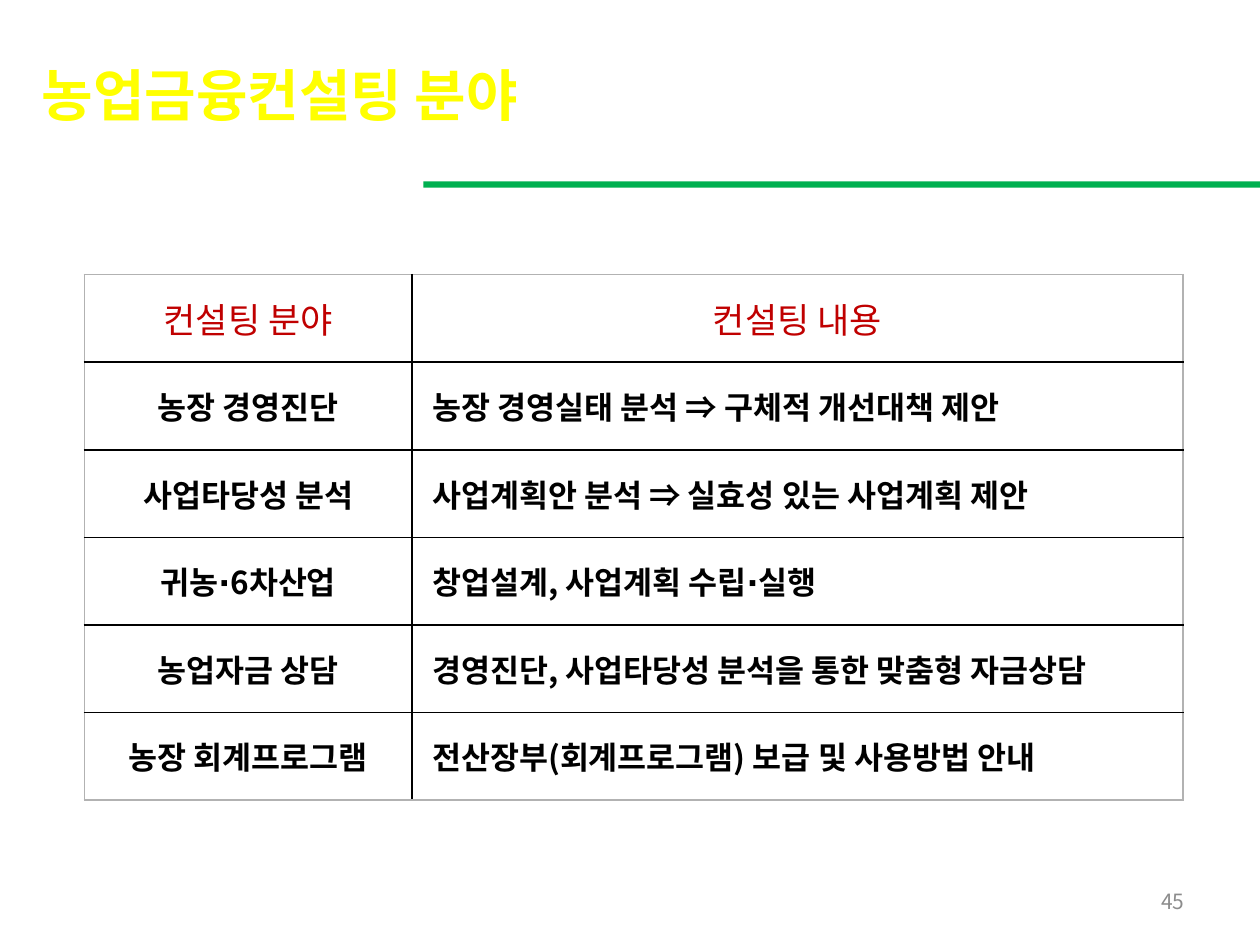
from lxml.etree import SubElement
from pptx import Presentation
from pptx.dml.color import RGBColor
from pptx.enum.shapes import MSO_SHAPE
from pptx.enum.text import MSO_ANCHOR, PP_ALIGN
from pptx.oxml.ns import qn
from pptx.util import Inches, Pt

FONT = "Noto Sans CJK KR"
YELLOW = RGBColor(0xFF, 0xFF, 0x00)
GREEN = RGBColor(0x00, 0xB0, 0x50)
RED = RGBColor(0xC0, 0x00, 0x00)
BLACK = RGBColor(0x00, 0x00, 0x00)
GRAY = RGBColor(0x8C, 0x8C, 0x8C)
FRAME_GRAY = RGBColor(0xB2, 0xB2, 0xB2)

COLUMN_WIDTHS = (2.6, 6.12)
ROW_HEIGHT = 0.695
ROWS = (
    ("컨설팅 분야", "컨설팅 내용"),
    ("농장 경영진단", "농장 경영실태 분석 ⇒ 구체적 개선대책 제안"),
    ("사업타당성 분석", "사업계획안 분석 ⇒ 실효성 있는 사업계획 제안"),
    ("귀농∙6차산업", "창업설계, 사업계획 수립∙실행"),
    ("농업자금 상담", "경영진단, 사업타당성 분석을 통한 맞춤형 자금상담"),
    ("농장 회계프로그램", "전산장부(회계프로그램) 보급 및 사용방법 안내"),
)


def write_text(frame, text, size, color, bold=False, align=PP_ALIGN.LEFT):
    frame.text = text
    para = frame.paragraphs[0]
    para.alignment = align
    for span in para.runs:
        span.font.size = Pt(size)
        span.font.bold = bold
        span.font.color.rgb = color
        span.font.name = FONT
        SubElement(span.font._element, qn("a:ea")).set("typeface", FONT)


def add_title(page, text):
    title = page.shapes.title
    title.left, title.top = Inches(0.23), Inches(0.43)
    title.width, title.height = Inches(5.32), Inches(0.64)
    title.text_frame.vertical_anchor = MSO_ANCHOR.MIDDLE
    write_text(title.text_frame, text, 32, YELLOW, bold=True)


def add_rule(page):
    rule = page.shapes.add_shape(
        MSO_SHAPE.RECTANGLE, Inches(3.36), Inches(1.44), Inches(6.64), Inches(0.05))
    rule.shadow.inherit = False
    rule.fill.solid()
    rule.fill.fore_color.rgb = GREEN
    rule.line.fill.background()


def set_border(cell, side, color):
    line = SubElement(cell._tc.get_or_add_tcPr(), qn(f"a:{side}"), w=str(Pt(1)))
    fill = SubElement(line, qn("a:solidFill"))
    SubElement(fill, qn("a:srgbClr"), val=str(color))


def format_cell(cell, row, column):
    outer_sides = {
        "lnL": column == 0,
        "lnR": column == len(COLUMN_WIDTHS) - 1,
        "lnT": row == 0,
        "lnB": row == len(ROWS) - 1,
    }
    for side, is_outer in outer_sides.items():
        set_border(cell, side, FRAME_GRAY if is_outer else BLACK)
    cell.fill.background()
    cell.vertical_anchor = MSO_ANCHOR.MIDDLE
    is_header = row == 0
    is_centered = is_header or column == 0
    cell.margin_left = Inches(0.1 if is_centered else 0.16)
    write_text(
        cell.text_frame, ROWS[row][column],
        20 if is_header else 18, RED if is_header else BLACK,
        bold=not is_header,
        align=PP_ALIGN.CENTER if is_centered else PP_ALIGN.LEFT)


def add_consulting_table(page):
    table = page.shapes.add_table(
        len(ROWS), len(COLUMN_WIDTHS), Inches(0.67), Inches(2.18),
        Inches(sum(COLUMN_WIDTHS)), Inches(ROW_HEIGHT * len(ROWS))).table
    table.first_row = False
    table.horz_banding = False
    for column, width in zip(table.columns, COLUMN_WIDTHS):
        column.width = Inches(width)
    for row_index, row in enumerate(table.rows):
        row.height = Inches(ROW_HEIGHT)
        for column_index, cell in enumerate(row.cells):
            format_cell(cell, row_index, column_index)


def add_page_number(page, number):
    box = page.shapes.add_textbox(Inches(7.17), Inches(6.95), Inches(2.33), Inches(0.4))
    box.text_frame.word_wrap = True
    box.text_frame.vertical_anchor = MSO_ANCHOR.MIDDLE
    write_text(box.text_frame, number, 12, GRAY, align=PP_ALIGN.RIGHT)


def main():
    deck = Presentation()
    deck.slide_width, deck.slide_height = Inches(10), Inches(7.5)
    page = deck.slides.add_slide(deck.slide_layouts[5])
    add_title(page, "농업금융컨설팅 분야")
    add_rule(page)
    add_consulting_table(page)
    add_page_number(page, "45")
    deck.save("out.pptx")


if __name__ == "__main__":
    main()
